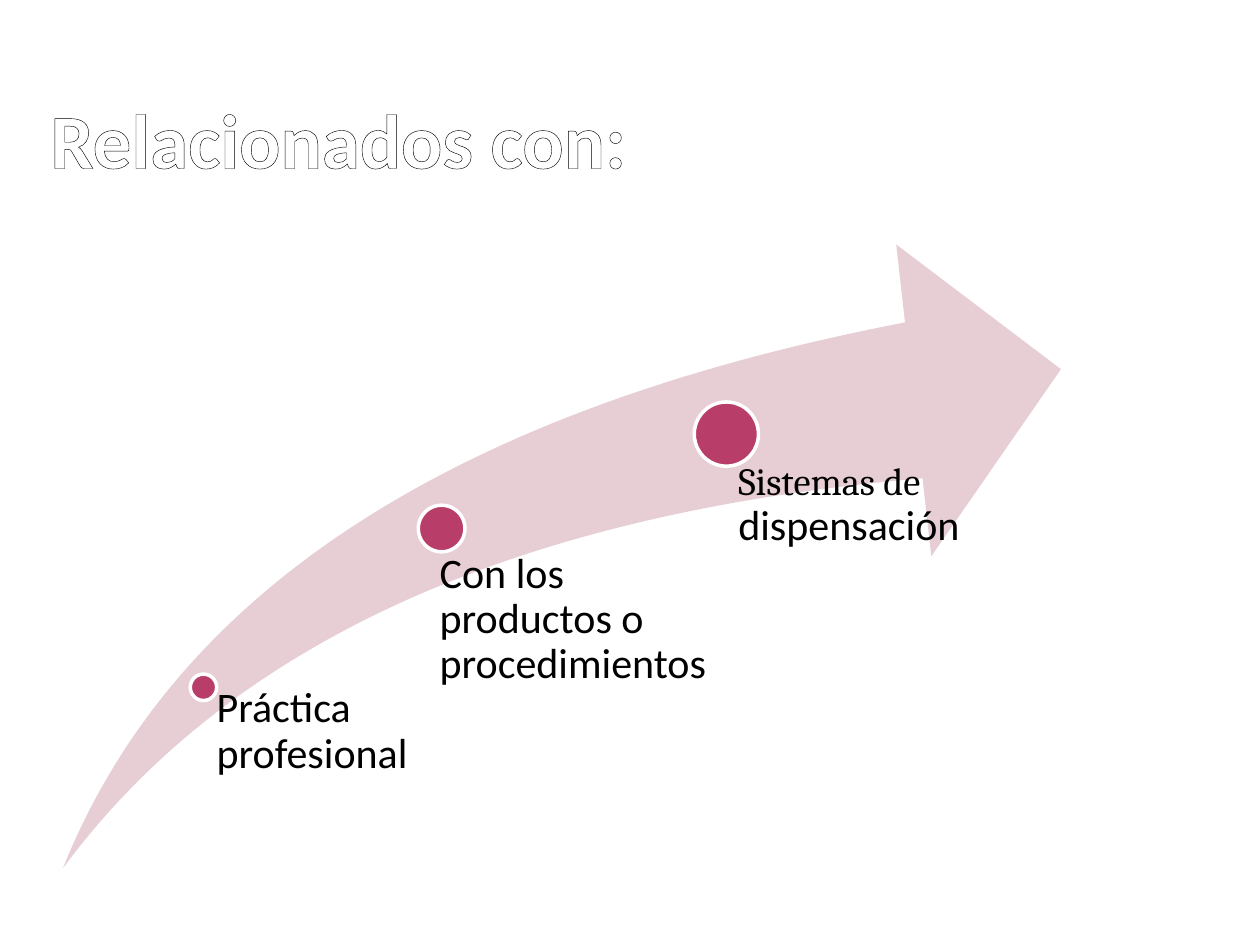
from lxml import etree
from pptx import Presentation
from pptx.dml.color import RGBColor
from pptx.enum.shapes import MSO_SHAPE
from pptx.enum.text import MSO_ANCHOR, MSO_AUTO_SIZE, PP_ALIGN
from pptx.oxml.ns import qn
from pptx.util import Inches, Pt

SWOOSH, OVAL = MSO_SHAPE.SWOOSH_ARROW, MSO_SHAPE.OVAL
TOP, BOTTOM = MSO_ANCHOR.TOP, MSO_ANCHOR.BOTTOM
LEFT = PP_ALIGN.LEFT
NO_AUTOFIT = MSO_AUTO_SIZE.NONE

COLORS = {"white": "FFFFFF", "black": "000000", "gray": "7F7F7F",
          "arrow": "E6CED4", "milestone": "B83D68"}
TITLE_STOPS = [(0, "white"), (9, "white"), (50, "gray"), (79, "white"), (100, "white")]

# Milestone: dot left, top, diameter; label box; label left inset; text runs
MILESTONES = [
    ((1.51, 5.35, 0.21), (1.61, 5.45, 1.84, 1.43), 0.11,
     [("Práctica profesional", "Calibri", 24)]),
    ((3.32, 4.01, 0.37), (3.29, 4.38, 2.34, 2.32), 0.2,
     [("Con los productos o procedimientos", "Calibri", 24)]),
    ((5.51, 3.19, 0.51), (5.59, 3.67, 2.24, 2.99), 0.27,
     [("Sistemas de ", "Cambria", 22), ("dispensación", "Calibri", 24)]),
]


def rgb(name):
    return RGBColor.from_string(COLORS[name])


def inches(*lengths):
    return [Inches(length) for length in lengths]


def write_text(frame, runs, *, inset=0, right=0, anchor=TOP, spacing=1.0,
               bold=False, color="black"):
    frame.word_wrap = True
    frame.auto_size = NO_AUTOFIT
    frame.vertical_anchor = anchor
    frame.margin_left, frame.margin_right = inches(inset, right)
    frame.margin_top = frame.margin_bottom = 0
    paragraph = frame.paragraphs[0]
    paragraph.alignment = LEFT
    paragraph.line_spacing = spacing
    for text, font, size in runs:
        run = paragraph.add_run()
        run.text = text
        run.font.name = font
        run.font.size = Pt(size)
        run.font.bold = bold
        run.font.color.rgb = rgb(color)
    return paragraph


def add_color(parent, name):
    etree.SubElement(parent, qn("a:srgbClr"), val=COLORS[name])


def outline_run(run, width):
    """Give the letters a black outline and a vertical gradient fill."""
    properties = run.font._element
    properties.remove(properties.find(qn("a:solidFill")))
    outline = etree.Element(qn("a:ln"), w=str(Pt(width)))
    add_color(etree.SubElement(outline, qn("a:solidFill")), "black")
    gradient = etree.Element(qn("a:gradFill"))
    stops = etree.SubElement(gradient, qn("a:gsLst"))
    for percent, name in TITLE_STOPS:
        add_color(etree.SubElement(stops, qn("a:gs"), pos=str(percent * 1000)), name)
    etree.SubElement(gradient, qn("a:lin"), ang="5400000")
    properties.insert(0, outline)
    properties.insert(1, gradient)


def add_title(slide):
    title = slide.shapes.title
    title.left, title.top, title.width, title.height = inches(0.35, 0.21, 7.92, 1.25)
    paragraph = write_text(title.text_frame, [("Relacionados con:", "Calibri", 44)],
                           inset=0.05, right=0.05, anchor=BOTTOM, bold=True)
    outline_run(paragraph.runs[0], 0.83)


def add_filled(shapes, kind, box, fill, line=None):
    shape = shapes.add_shape(kind, *inches(*box))
    shape.shadow.inherit = False
    shape.fill.solid()
    shape.fill.fore_color.rgb = rgb(fill)
    if line:
        shape.line.color.rgb = rgb(line)
        shape.line.width = Pt(2)
    else:
        shape.line.fill.background()
    return shape


def add_milestone(shapes, dot, label_box, inset, runs):
    left, top, diameter = dot
    add_filled(shapes, OVAL, (left, top, diameter, diameter), "milestone", "white")
    label = shapes.add_textbox(*inches(*label_box))
    write_text(label.text_frame, runs, inset=inset, spacing=0.9)


def main():
    prs = Presentation()
    prs.slide_width, prs.slide_height = inches(10, 7.5)
    slide = prs.slides.add_slide(prs.slide_layouts[5])
    add_title(slide)
    diagram = slide.shapes.add_group_shape().shapes
    arrow = add_filled(diagram, SWOOSH, (0.5, 1.94, 7.92, 4.95), "arrow")
    arrow.adjustments[0] = arrow.adjustments[1] = 0.25
    for milestone in MILESTONES:
        add_milestone(diagram, *milestone)
    prs.save("out.pptx")


if __name__ == "__main__":
    main()
